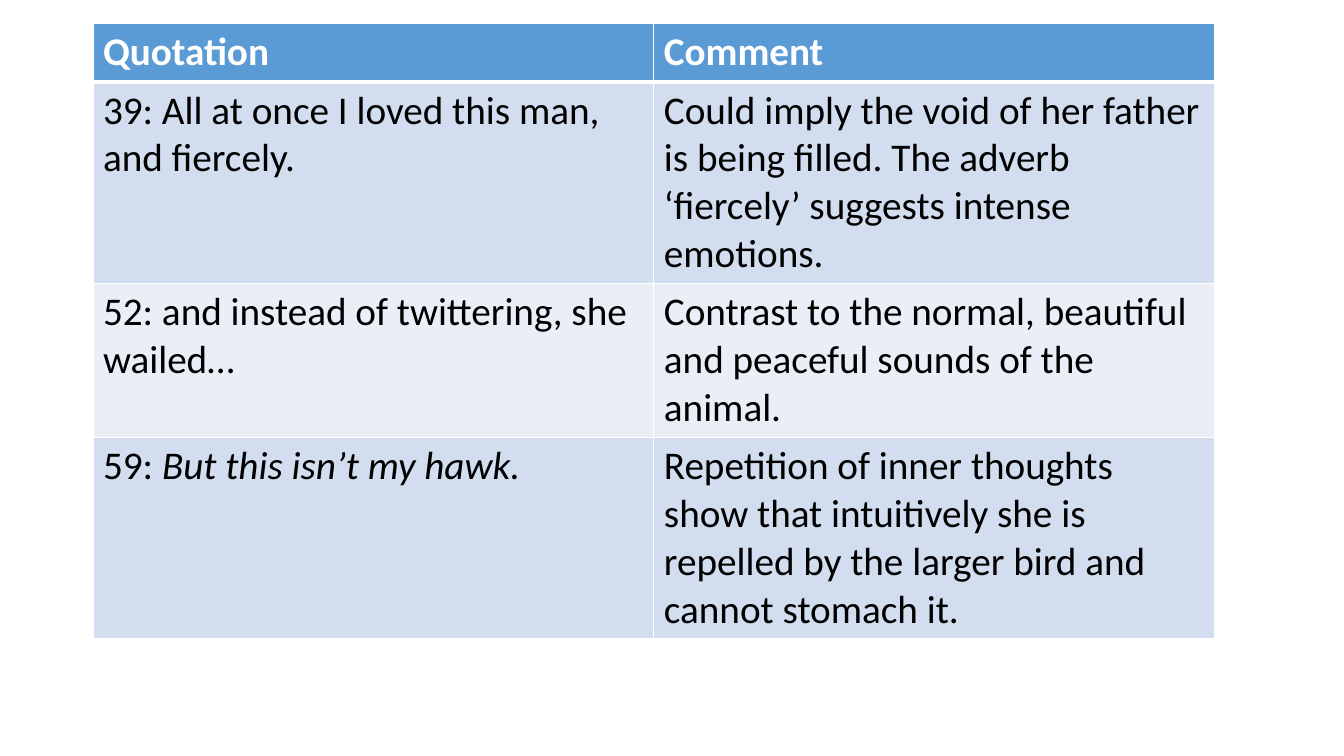
from lxml.etree import SubElement
from pptx import Presentation
from pptx.dml.color import RGBColor
from pptx.oxml.ns import qn
from pptx.util import Pt

WHITE = RGBColor(0xFF, 0xFF, 0xFF)
BLACK = RGBColor(0x00, 0x00, 0x00)
HEADER_BLUE = RGBColor(0x5B, 0x9B, 0xD5)
BAND_DARK = RGBColor(0xD2, 0xDE, 0xEF)
BAND_LIGHT = RGBColor(0xEA, 0xEF, 0xF7)

# Each cell is a list of runs; the second run of a cell is italic
ROWS = [
    (["Quotation"], ["Comment"]),
    (["39: All at once I loved this man, and fiercely."],
     ["Could imply the void of her father is being filled. The adverb "
      "‘fiercely’ suggests intense emotions."]),
    (["52: and instead of twittering, she wailed…"],
     ["Contrast to the normal, beautiful and peaceful sounds of the animal."]),
    (["59: ", "But this isn’t my hawk."],
     ["Repetition of inner thoughts show that intuitively she is repelled "
      "by the larger bird and cannot stomach it."]),
]
ROW_FILLS = [HEADER_BLUE, BAND_DARK, BAND_LIGHT, BAND_DARK]
ROW_HEIGHTS = [41.4, 143.9, 109.7, 143.9]
COLUMN_WIDTH = 400.7


def add_border(cell, side, width):
    line = SubElement(cell._tc.get_or_add_tcPr(), qn(f"a:ln{side}"), w=str(Pt(width)))
    fill = SubElement(line, qn("a:solidFill"))
    SubElement(fill, qn("a:srgbClr"), val=str(WHITE))


prs = Presentation()
prs.slide_width, prs.slide_height = Pt(960), Pt(540)
slide = prs.slides.add_slide(prs.slide_layouts[6])

# Table grid
quotations = slide.shapes.add_table(
    len(ROWS), 2, Pt(66.4), Pt(16.9), Pt(2 * COLUMN_WIDTH), Pt(sum(ROW_HEIGHTS))
).table
for column in quotations.columns:
    column.width = Pt(COLUMN_WIDTH)

# Header and banded rows
for r, (row_texts, row_fill, height) in enumerate(zip(ROWS, ROW_FILLS, ROW_HEIGHTS)):
    quotations.rows[r].height = Pt(height)
    is_header = r == 0
    for c, runs in enumerate(row_texts):
        cell = quotations.cell(r, c)
        for side in "LRTB":
            thick = (is_header and side == "B") or (r == 1 and side == "T")
            add_border(cell, side, 3 if thick else 1)
        cell.fill.solid()
        cell.fill.fore_color.rgb = row_fill

        paragraph = cell.text_frame.paragraphs[0]
        for i, text in enumerate(runs):
            run = paragraph.add_run()
            run.text = text
            run.font.name = "Calibri"
            run.font.size = Pt(28)
            run.font.bold = is_header
            run.font.italic = i == 1
            run.font.color.rgb = WHITE if is_header else BLACK

prs.save("out.pptx")
